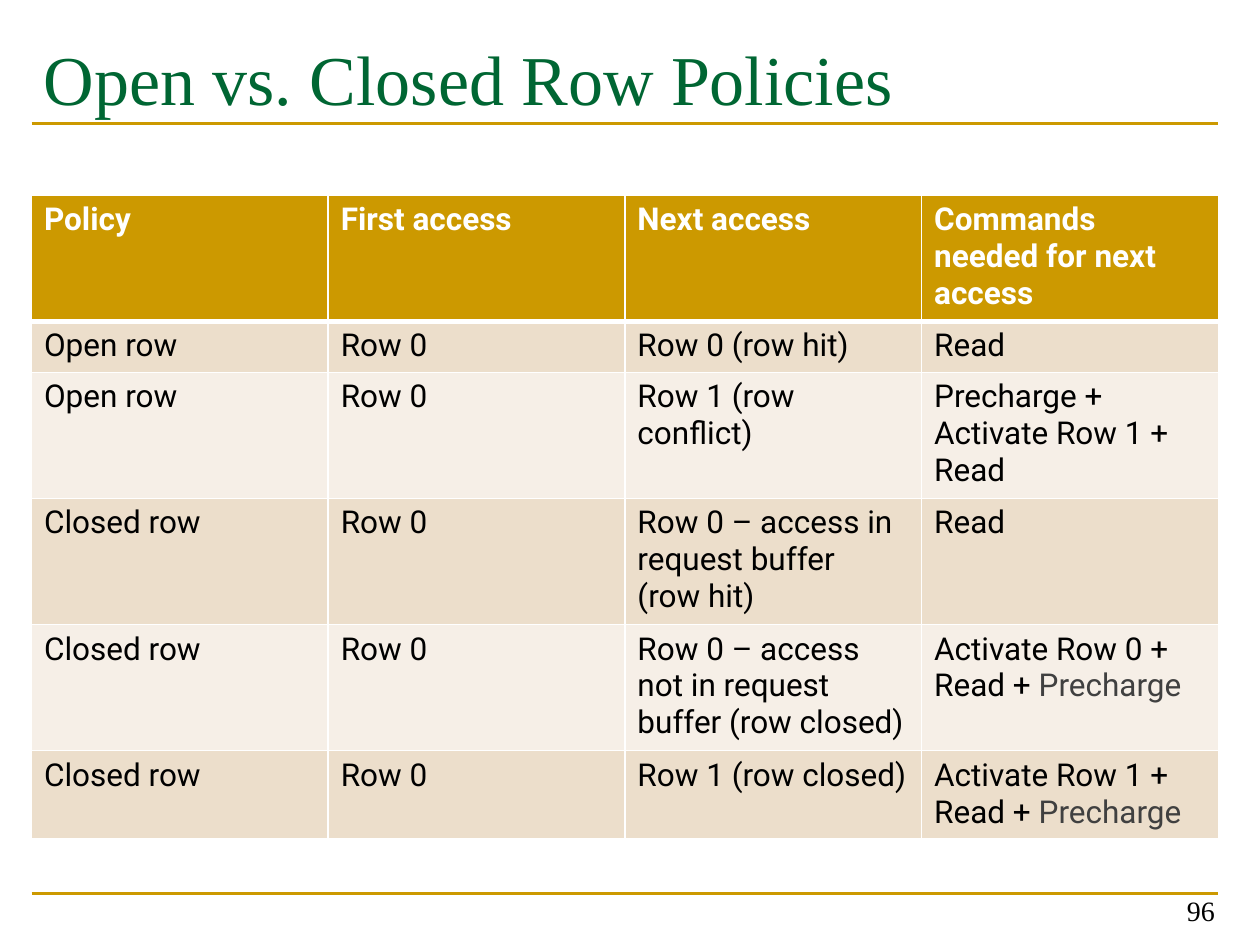
from lxml.etree import SubElement
from pptx import Presentation
from pptx.dml.color import RGBColor
from pptx.enum.shapes import MSO_CONNECTOR
from pptx.enum.text import MSO_ANCHOR, PP_ALIGN
from pptx.oxml.ns import qn
from pptx.util import Pt

COLORS = {
    "gold": "CC9900",
    "green": "006633",
    "black": "000000",
    "gray": "404040",
    "white": "FFFFFF",
    "dark_band": "ECDECB",
    "light_band": "F6EFE7",
}
LEFT, WIDTH = 18, 678.24
ROW_HEIGHTS = [72, 29.2, 72, 72, 72, 50.4]
PRECHARGE = "Precharge"

# A cell is a list of paragraphs; a paragraph is a list of (text, color) runs.
HEADER = ["Policy", "First access", "Next access", "Commands needed for next access"]
POLICIES = [
    ["Open row", "Row 0", "Row 0 (row hit)", "Read"],
    ["Open row", "Row 0", "Row 1 (row conflict)", "Precharge + Activate Row 1 +\nRead"],
    ["Closed row", "Row 0", "Row 0 – access in request buffer\n(row hit)", "Read"],
    ["Closed row", "Row 0", "Row 0 – access not in request buffer (row closed)",
     ("Activate Row 0 + Read + ", PRECHARGE)],
    ["Closed row", "Row 0", "Row 1 (row closed)",
     ("Activate Row 1 + Read + ", PRECHARGE)],
]


def rgb(name):
    return RGBColor.from_string(COLORS[name])


def style_paragraph(paragraph, font_name, size, color, bold=False):
    font = paragraph.font
    font.name, font.size, font.bold = font_name, Pt(size), bold
    font.color.rgb = rgb(color)


def add_rule(slide, top):
    """Add a gold horizontal line across the content width."""
    rule = slide.shapes.add_connector(
        MSO_CONNECTOR.STRAIGHT, Pt(LEFT), Pt(top), Pt(LEFT + WIDTH), Pt(top))
    rule.line.color.rgb = rgb("gold")
    rule.line.width = Pt(1.5)
    SubElement(rule._element.spPr, qn("a:effectLst"))


def add_text(slide, text, box, size, color, anchor, alignment, margin_top=3.6):
    shape = slide.shapes.add_textbox(*(Pt(value) for value in box))
    frame = shape.text_frame
    frame.word_wrap = True
    frame.vertical_anchor = anchor
    frame.margin_top = Pt(margin_top)
    frame.text = text
    paragraph = frame.paragraphs[0]
    paragraph.alignment = alignment
    style_paragraph(paragraph, "Times New Roman", size, color)


def set_borders(cell, top, bottom):
    """Draw white cell borders, with top and bottom widths in points."""
    properties = cell._tc.get_or_add_tcPr()
    for side, width in (("L", 1), ("R", 1), ("T", top), ("B", bottom)):
        line = SubElement(properties, qn(f"a:ln{side}"), w=str(Pt(width)))
        fill = SubElement(line, qn("a:solidFill"))
        SubElement(fill, qn("a:srgbClr"), val=COLORS["white"])


def fill_cell(cell, content, color, bold):
    """Write the content; the second part of a tuple becomes a gray run."""
    text, gray_text = content if isinstance(content, tuple) else (content, "")
    cell.text = text
    for paragraph in cell.text_frame.paragraphs:
        style_paragraph(paragraph, "Roboto", 18, color, bold)
    if gray_text:
        run = paragraph.add_run()
        run.text = gray_text
        run.font.color.rgb = rgb("gray")


def add_policy_table(slide, top):
    rows = [HEADER] + POLICIES
    table = slide.shapes.add_table(
        len(rows), len(HEADER), Pt(LEFT), Pt(top), Pt(WIDTH), Pt(sum(ROW_HEIGHTS))).table
    for column in table.columns:
        column.width = Pt(WIDTH / len(HEADER))
    for row_index, (contents, height) in enumerate(zip(rows, ROW_HEIGHTS)):
        table.rows[row_index].height = Pt(height)
        is_header = row_index == 0
        band = "gold" if is_header else "dark_band" if row_index % 2 else "light_band"
        for column_index, content in enumerate(contents):
            cell = table.cell(row_index, column_index)
            fill_cell(cell, content, "white" if is_header else "black", is_header)
            set_borders(cell, 3 if row_index == 1 else 1, 3 if is_header else 1)
            cell.fill.solid()
            cell.fill.fore_color.rgb = rgb(band)


def main():
    presentation = Presentation()
    presentation.slide_width, presentation.slide_height = Pt(720), Pt(540)
    slide = presentation.slides.add_slide(presentation.slide_layouts[6])
    for top in (510.5, 70.6):
        add_rule(slide, top)
    add_text(slide, "Open vs. Closed Row Policies", (LEFT, 12.24, WIDTH, 84.24),
             40, "green", MSO_ANCHOR.TOP, PP_ALIGN.LEFT, margin_top=8)
    add_policy_table(slide, 111.6)
    add_text(slide, "96", (533.5, 497.5, 167.8, 36),
             16, "black", MSO_ANCHOR.BOTTOM, PP_ALIGN.RIGHT)
    presentation.save("out.pptx")


if __name__ == "__main__":
    main()
